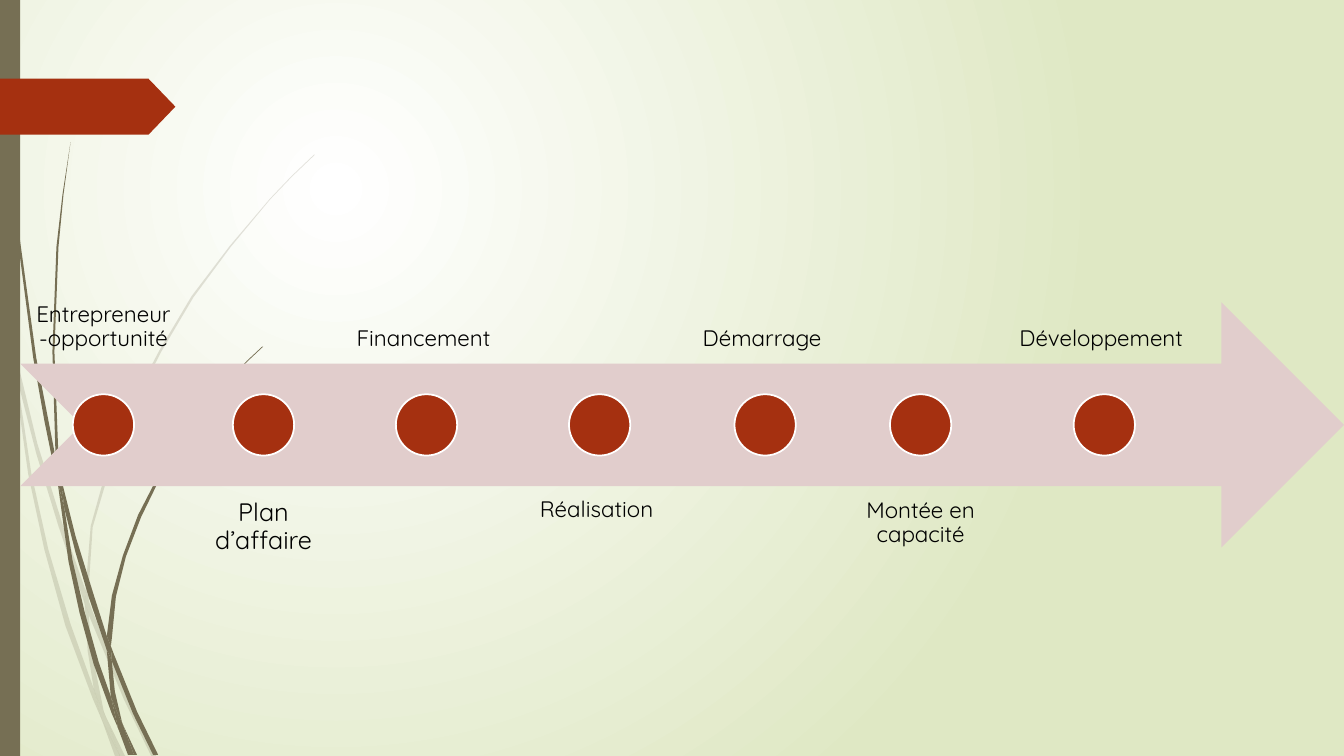
import lxml.etree
import pptx
import pptx.dml.color
import pptx.enum.shapes
import pptx.enum.text
import pptx.oxml
import pptx.oxml.ns
import pptx.util

Pt = pptx.util.Pt
SHAPES = pptx.enum.shapes.MSO_SHAPE
ANCHOR = pptx.enum.text.MSO_ANCHOR


class Theme:
    font = "Quicksand"
    label_size = 16
    large_label_size = 18
    ink = "000000"
    white = "FFFFFF"
    leaf = "DFE8C4"
    stem = "766F54"
    accent = "A53010"
    arrow = "E1CDCC"


# Outlines of the grass pieces, in units of 0.72 point
GRASS_UNIT = 0.72
PALE_GRASS = [
    [(11, 350), (9, 322), (0, 282), (0, 299), (10, 344)],
    [(58, 522), (84, 599), (85, 586), (62, 520), (37, 440), (14, 345), (17, 376),
     (36, 450)],
    [(92, 607), (88, 596), (88, 610), (123, 694), (150, 750), (155, 750), (127, 692)],
    [(119, 750), (124, 750), (105, 711)],
    [(93, 683), (70, 619), (48, 545), (31, 469), (17, 376), (11, 350), (28, 470),
     (44, 545), (65, 621), (92, 693), (101, 714), (99, 707)],
    [(84, 599), (87, 646), (93, 683), (96, 692), (105, 711), (103, 706), (91, 646),
     (88, 610), (88, 608)],
    [(88, 584), (92, 523), (110, 462), (132, 404), (160, 349), (192, 295), (229, 245),
     (268, 198), (290, 175), (312, 154), (312, 153), (289, 175), (268, 197),
     (228, 244), (190, 294), (158, 348), (129, 403), (107, 461), (90, 522),
     (85, 584), (85, 586), (88, 596)],
    [(101, 714), (114, 750), (119, 750)],
    [(88, 608), (88, 596), (85, 586), (84, 599)],
    [(96, 692), (93, 683), (99, 707), (101, 714), (119, 750), (105, 711)],
]
DARK_GRASS = [
    [(7, 110), (17, 233), (33, 355), (44, 417), (57, 481), (55, 457), (55, 453),
     (36, 355), (19, 232), (8, 109), (5, 48), (4, 0), (3, 0), (4, 48)],
    [(88, 592), (106, 645), (106, 631), (93, 590), (75, 532), (60, 472), (64, 505),
     (75, 548)],
    [(113, 649), (110, 641), (111, 656), (132, 708), (152, 749), (157, 749), (136, 706)],
    [(110, 691), (98, 657), (84, 607), (72, 556), (64, 505), (57, 477), (68, 557),
     (79, 608), (93, 659), (111, 708), (117, 722), (116, 717)],
    [(60, 472), (58, 453), (54, 349), (58, 245), (63, 193), (70, 141), (62, 193),
     (56, 245), (52, 349), (55, 449)],
    [(133, 749), (136, 749), (122, 719)],
    [(57, 477), (64, 505), (60, 472), (55, 449), (55, 453)],
    [(111, 633), (115, 592), (125, 552), (140, 513), (158, 476), (180, 440), (205, 406),
     (231, 374), (245, 359), (261, 344), (260, 344), (245, 358), (231, 373),
     (204, 405), (179, 439), (156, 474), (137, 511), (122, 551), (111, 591),
     (106, 631), (110, 641)],
    [(117, 722), (127, 749), (131, 749)],
    [(106, 645), (110, 691), (116, 706), (122, 719), (121, 716), (114, 686), (111, 656),
     (109, 651)],
    [(106, 645), (109, 651), (111, 656), (110, 641), (106, 631)],
    [(116, 706), (110, 691), (116, 717), (117, 722), (130, 749), (133, 749), (122, 719)],
]

# Each stage: label, column width, type size, inset
STAGES = [
    ("Entrepreneur-opportunité", 118.8, Theme.label_size, 9),
    ("Plan d’affaire", 99.4, Theme.large_label_size, 10),
    ("Financement ", 123.1, Theme.label_size, 9),
    ("Réalisation ", 113.8, Theme.label_size, 9),
    ("Démarrage ", 112.3, Theme.label_size, 9),
    ("Montée en capacité", 99.4, Theme.label_size, 9),
    ("Développement ", 152.6, Theme.label_size, 9),
]


class Painter:
    def __init__(self, page, theme):
        self.page = page
        self.theme = theme

    def color(self, name):
        return pptx.dml.color.RGBColor.from_string(name)

    def backdrop(self, inner, outer):
        fill = self.page.background.fill
        fill.gradient()
        for stop, name, position in zip(fill.gradient_stops, (inner, outer), (0, 1)):
            stop.color.rgb = self.color(name)
            stop.position = position
        gradient = self.page.element.find(".//" + pptx.oxml.ns.qn("a:gradFill"))
        linear = gradient.find(pptx.oxml.ns.qn("a:lin"))
        radial = pptx.oxml.parse_xml(
            f'<a:path {pptx.oxml.ns.nsdecls("a")} path="circle">'
            '<a:fillToRect l="50000" t="50000" r="100000" b="100000"/></a:path>')
        gradient.replace(linear, radial)

    def paint(self, shape, fill, line=None, alpha=None):
        shape.shadow.inherit = False
        shape.fill.solid()
        shape.fill.fore_color.rgb = self.color(fill)
        if line:
            shape.line.color.rgb = self.color(line)
            shape.line.width = Pt(1.25)
        else:
            shape.line.fill.background()
        if alpha:
            tint = shape.element.spPr.find(".//" + pptx.oxml.ns.qn("a:srgbClr"))
            lxml.etree.SubElement(tint, pptx.oxml.ns.qn("a:alpha"), val=str(alpha * 1000))

    def shape(self, kind, left, top, width, height, fill, line=None):
        shape = self.page.shapes.add_shape(kind, Pt(left), Pt(top), Pt(width), Pt(height))
        self.paint(shape, fill, line)
        return shape

    def grass(self, outlines, alpha=None):
        for outline in outlines:
            builder = self.page.shapes.build_freeform(*outline[0], scale=Pt(GRASS_UNIT))
            builder.add_line_segments(outline[1:], close=True)
            self.paint(builder.convert_to_shape(), self.theme.stem, alpha=alpha)

    def label(self, text, left, top, width, height, size, inset, anchor):
        box = self.page.shapes.add_textbox(Pt(left), Pt(top), Pt(width), Pt(height))
        frame = box.text_frame
        frame.word_wrap = True
        frame.vertical_anchor = anchor
        frame.margin_left = frame.margin_right = Pt(inset)
        frame.margin_top = frame.margin_bottom = Pt(inset)
        frame.text = text
        para = frame.paragraphs[0]
        para.alignment = pptx.enum.text.PP_ALIGN.CENTER
        para.line_spacing = 0.9
        font = para.runs[0].font
        font.name = self.theme.font
        font.size = Pt(size)
        font.color.rgb = self.color(self.theme.ink)


def main():
    deck = pptx.Presentation()
    deck.slide_width, deck.slide_height = Pt(960), Pt(540)
    page = deck.slides.add_slide(deck.slide_layouts[6])
    theme = Theme()
    painter = Painter(page, theme)

    # Background, grass, side bar and flag
    painter.backdrop(theme.white, theme.leaf)
    painter.grass(PALE_GRASS, alpha=20)
    painter.grass(DARK_GRASS)
    painter.shape(SHAPES.RECTANGLE, 0, 0, 14.4, 540, theme.stem)
    flag = painter.shape(SHAPES.PENTAGON, 0, 56.2, 125.3, 40, theme.accent)
    flag.adjustments[0] = 0.48

    # Timeline arrow
    left, top, height, gap, dot = 14.5, 216, 175, 5.2, 43.8
    painter.shape(SHAPES.NOTCHED_RIGHT_ARROW, left, top, 960 - left, height, theme.arrow)

    # Stages, with labels above and below in turn
    for index, (text, width, size, inset) in enumerate(STAGES):
        if index % 2 == 0:
            label_top, anchor = top - 0.75 * height, ANCHOR.BOTTOM
        else:
            label_top, anchor = top + 0.75 * height, ANCHOR.TOP
        painter.label(text, left, label_top, width, height, size, inset, anchor)
        painter.shape(SHAPES.OVAL, left + (width - dot) / 2, top + (height - dot) / 2,
                      dot, dot, theme.accent, theme.white)
        left += width + gap

    deck.save("out.pptx")


if __name__ == "__main__":
    main()
